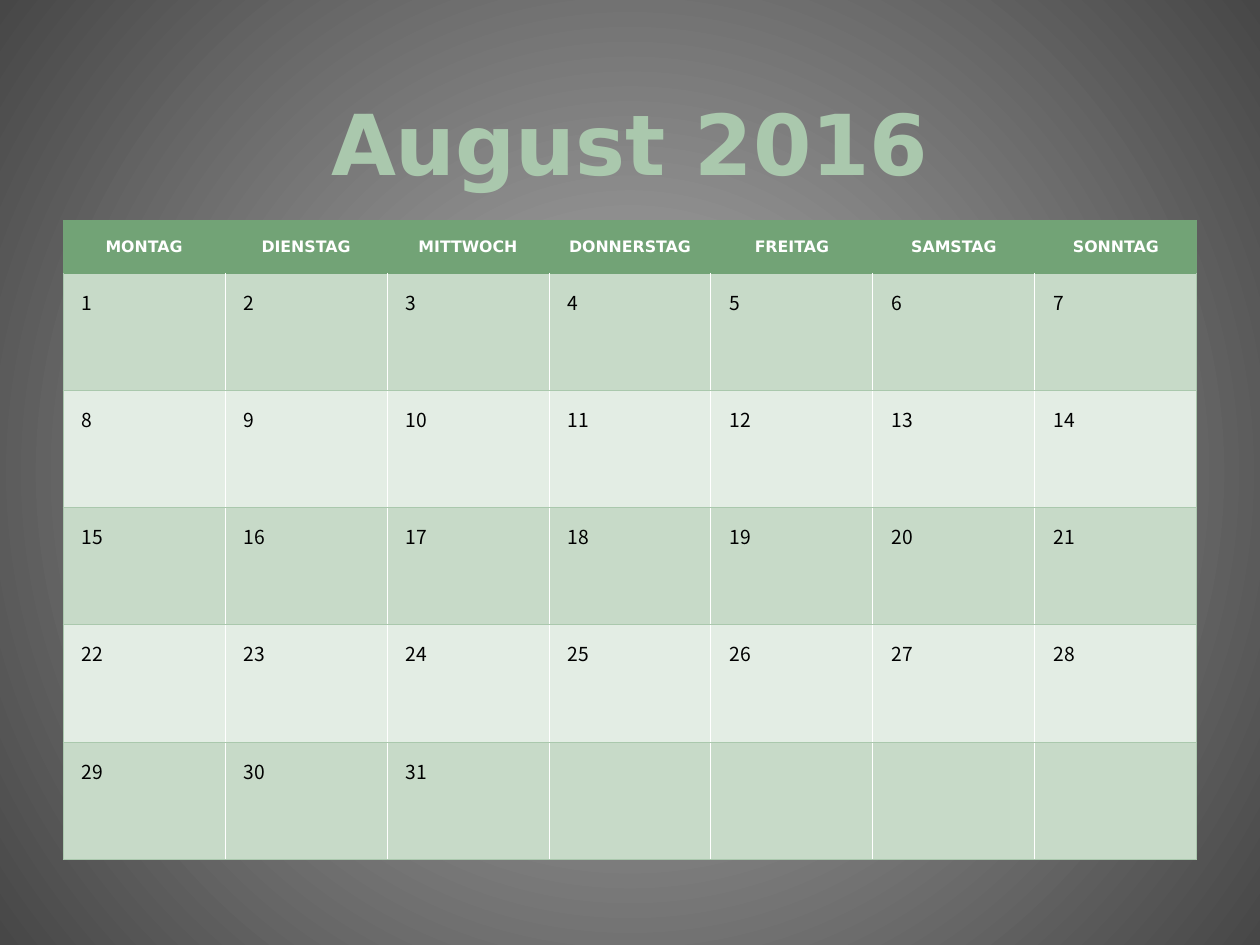
from lxml.etree import SubElement
from pptx import Presentation
from pptx.dml.color import RGBColor
from pptx.enum.text import MSO_ANCHOR, PP_ALIGN
from pptx.oxml import parse_xml
from pptx.oxml.ns import nsdecls, qn
from pptx.util import Inches, Pt

TITLE = "August 2016"
WEEKDAYS = ["MONTAG", "DIENSTAG", "MITTWOCH", "DONNERSTAG", "FREITAG", "SAMSTAG", "SONNTAG"]
DAY_COUNT = 31
WEEK_COUNT = 5

HEADING_FONT = "DejaVu Sans"
DAY_FONT = "Noto Sans CJK SC"
WHITE = RGBColor(0xFF, 0xFF, 0xFF)
BLACK = RGBColor(0x00, 0x00, 0x00)
GREEN = RGBColor(0x72, 0xA3, 0x76)
SOFT_GREEN = RGBColor(0xAA, 0xC8, 0xAD)
BAND_FILLS = [RGBColor(0xC7, 0xDA, 0xC8), RGBColor(0xE3, 0xED, 0xE4)]
BACKGROUND_STOPS = [RGBColor(0xB1, 0xB1, 0xB1), RGBColor(0x47, 0x47, 0x47)]

LEFT, TOP, WIDTH = 0.5, 1.75, 9
HEADER_HEIGHT, WEEK_HEIGHT = 0.42, 0.93


def write_text(frame, text, *, size, font, color, bold=False,
               align=PP_ALIGN.LEFT, line_spacing=None, indent=0):
    paragraph = frame.paragraphs[0]
    paragraph.alignment = align
    paragraph.line_spacing = line_spacing
    paragraph._p.get_or_add_pPr().set("marL", str(Inches(indent)))
    run = paragraph.add_run()
    run.text = text
    run.font.size = Pt(size)
    run.font.name = font
    run.font.bold = bold
    run.font.color.rgb = color


def set_borders(cell, left, right, top, bottom):
    properties = cell._tc.get_or_add_tcPr()
    for side, color in zip("LRTB", (left, right, top, bottom)):
        line = SubElement(properties, qn(f"a:ln{side}"), w=str(Pt(0.5)))
        fill = SubElement(line, qn("a:solidFill"))
        SubElement(fill, qn("a:srgbClr"), val=str(color))


def fill_cell(cell, color):
    cell.fill.solid()
    cell.fill.fore_color.rgb = color


def paint_background(slide):
    fill = slide.background.fill
    fill.gradient()
    for stop, color in zip(fill.gradient_stops, BACKGROUND_STOPS):
        stop.color.rgb = color
    direction = next(slide.element.iter(qn("a:lin")))
    direction.getparent().replace(direction, parse_xml(
        f'<a:path {nsdecls("a")} path="circle">'
        '<a:fillToRect l="50000" t="50000" r="50000" b="50000"/></a:path>'))


def add_title(slide):
    title = slide.shapes.title
    title.left, title.top = Inches(LEFT), Inches(0.33)
    title.width, title.height = Inches(WIDTH), Inches(1.25)
    title.text_frame.vertical_anchor = MSO_ANCHOR.BOTTOM
    write_text(title.text_frame, TITLE, size=48, font=HEADING_FONT,
               color=SOFT_GREEN, bold=True, align=PP_ALIGN.CENTER)


def add_calendar(slide):
    column_count = len(WEEKDAYS)
    height = HEADER_HEIGHT + WEEK_COUNT * WEEK_HEIGHT
    table = slide.shapes.add_table(
        WEEK_COUNT + 1, column_count,
        Inches(LEFT), Inches(TOP), Inches(WIDTH), Inches(height)).table
    for column in table.columns:
        column.width = Inches(WIDTH / column_count)
    for index, row in enumerate(table.rows):
        row.height = Inches(WEEK_HEIGHT if index else HEADER_HEIGHT)

    for column, weekday in enumerate(WEEKDAYS):
        cell = table.cell(0, column)
        set_borders(cell, GREEN, GREEN, GREEN, GREEN)
        fill_cell(cell, GREEN)
        cell.vertical_anchor = MSO_ANCHOR.MIDDLE
        write_text(cell.text_frame, weekday, size=9, font=HEADING_FONT,
                   color=WHITE, bold=True, align=PP_ALIGN.CENTER)

    for index in range(WEEK_COUNT * column_count):
        week, column = divmod(index, column_count)
        cell = table.cell(week + 1, column)
        set_borders(cell,
                    left=WHITE if column else SOFT_GREEN,
                    right=WHITE if column < column_count - 1 else SOFT_GREEN,
                    top=SOFT_GREEN if week else GREEN,
                    bottom=SOFT_GREEN)
        fill_cell(cell, BAND_FILLS[week % 2])
        if index < DAY_COUNT:
            write_text(cell.text_frame, str(index + 1), size=11, font=DAY_FONT,
                       color=BLACK, line_spacing=1.3, indent=0.05)


def main():
    presentation = Presentation()
    presentation.slide_width = Inches(10)
    presentation.slide_height = Inches(7.5)
    slide = presentation.slides.add_slide(presentation.slide_layouts[5])
    paint_background(slide)
    add_title(slide)
    add_calendar(slide)
    presentation.save("out.pptx")


if __name__ == "__main__":
    main()
